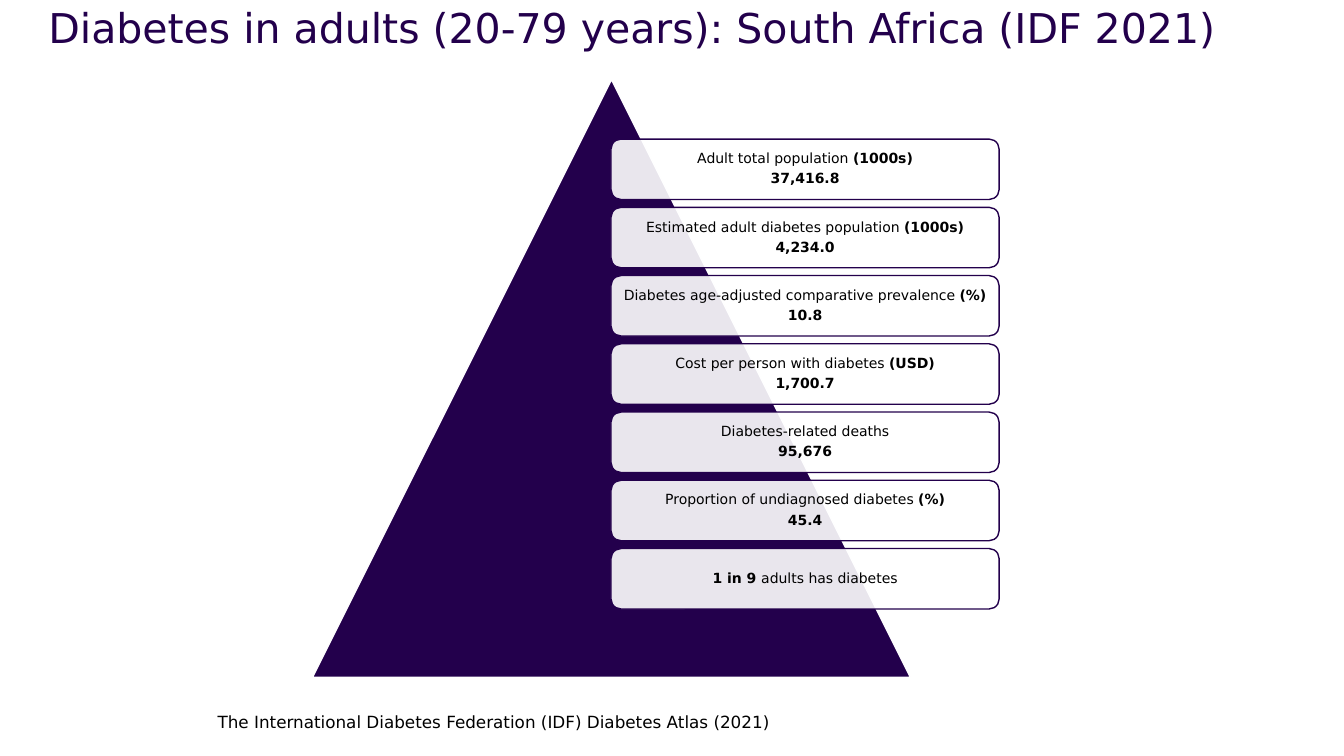
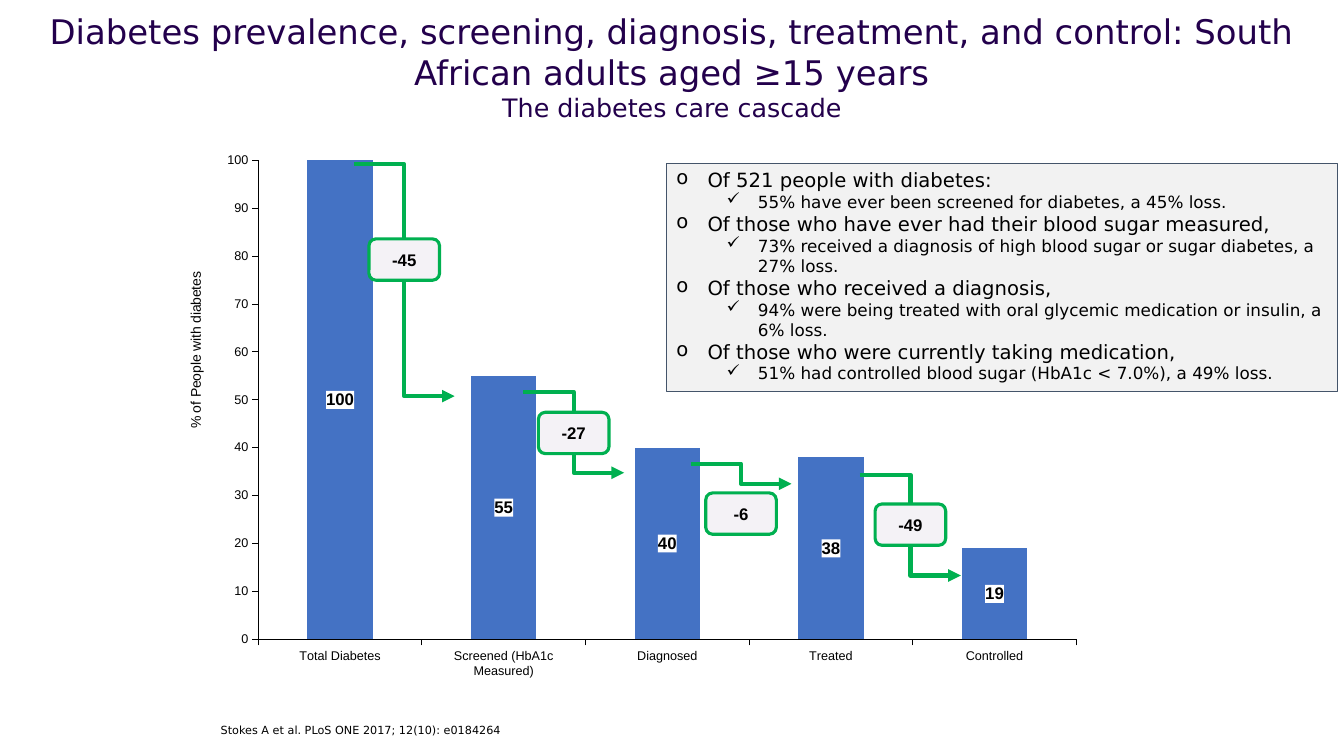
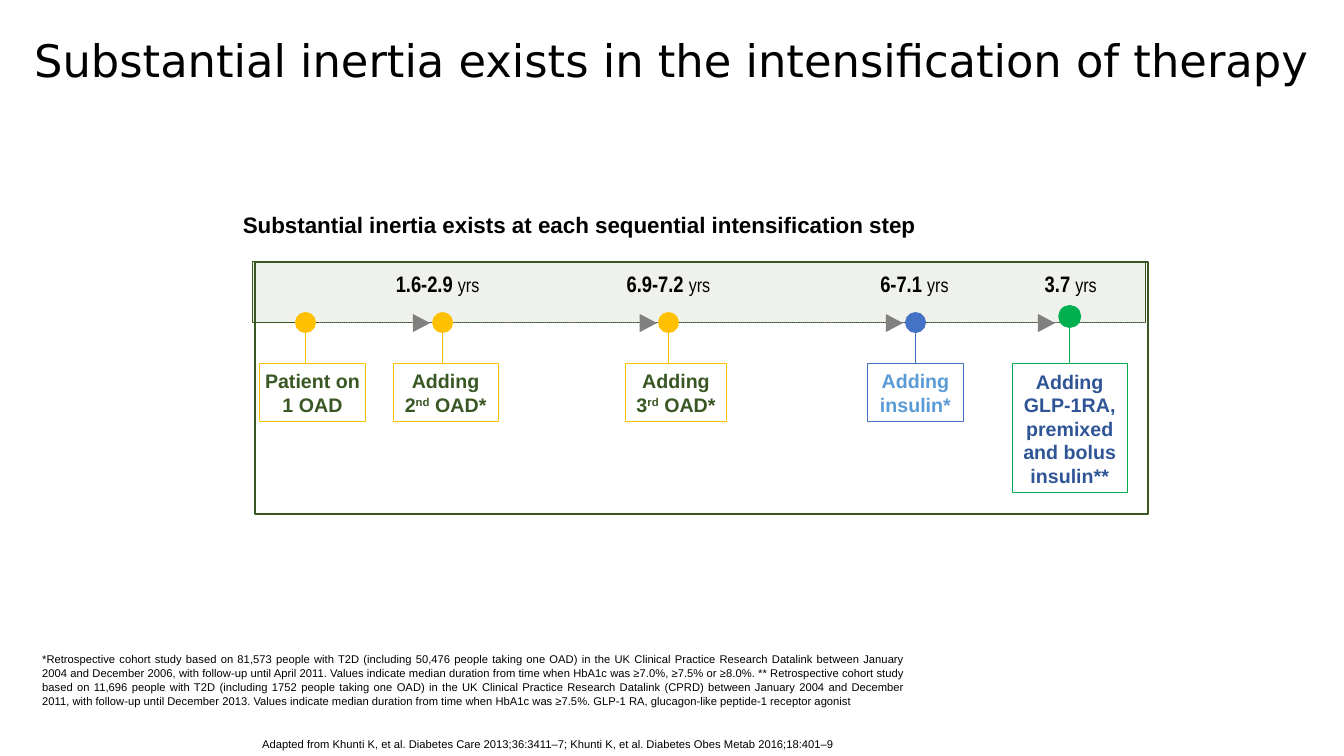
from lxml import etree
from pptx import Presentation
from pptx import util as u
from pptx.chart.data import CategoryChartData
from pptx.dml.color import RGBColor
from pptx.enum import chart as ch, dml, shapes, text
from pptx.oxml.ns import qn

PX = 9144  # EMU, so 100 px make an inch
SANS, ARIAL, NARROW = "DejaVu Sans", "Arial", "Arial Narrow"
INK, NAVY, WHITE = "000000", "23004C", "FFFFFF"
GREEN, GOLD, BLUE, GREY = "00B050", "FFC000", "4472C4", "808080"
MOSS, SKY, ROYAL = "385723", "5B9BD5", "2F5597"
KIND = shapes.MSO_SHAPE
LINK = shapes.MSO_CONNECTOR
ALIGN = text.PP_ALIGN
ANCHOR = text.MSO_ANCHOR
BOLD, SUPER = {"bold": True}, {"sup": True}

# Slide 1: each fact is a list of paragraphs made of (text, style) runs
FACTS = [
    [[("Adult total population ", {}), ("(1000s)", BOLD)], [("37,416.8", BOLD)]],
    [[("Estimated adult diabetes population ", {}), ("(1000s)", BOLD)], [("4,234.0", BOLD)]],
    [[("Diabetes age-adjusted comparative prevalence ", {}), ("(%)", BOLD)], [("10.8", BOLD)]],
    [[("Cost per person with diabetes ", {}), ("(USD)", BOLD)], [("1,700.7", BOLD)]],
    [["Diabetes-related deaths"], [("95,676", BOLD)]],
    [[("Proportion of undiagnosed diabetes ", {}), ("(%)", BOLD)], [("45.4", BOLD)]],
    [[("1 in 9 ", BOLD), ("adults has diabetes", {})]],
]

# Slide 2
CARE = {"Total Diabetes": 100, "Screened (HbA1c Measured)": 55,
        "Diagnosed": 40, "Treated": 38, "Controlled": 19}
LOSSES = [  # label, arrow left, arrow top, drop, badge top
    ("-45", 351, 163, 230, 237),
    ("-27", 519, 389, 80, 409),
    ("-6", 685, 460, 20, 489),
    ("-49", 853, 471, 100, 500),
]
NOTES = [
    ("Of 521 people with diabetes:",
     "55% have ever been screened for diabetes, a 45% loss."),
    ("Of those who have ever had their blood sugar measured,",
     "73% received a diagnosis of high blood sugar or sugar diabetes, a 27% loss."),
    ("Of those who received a diagnosis,",
     "94% were being treated with oral glycemic medication or insulin, a 6% loss."),
    ("Of those who were currently taking medication,",
     "51% had controlled blood sugar (HbA1c < 7.0%), a 49% loss."),
]

# Slide 3: dot centre x and y, dot size, colour; card left, width, height, ink, lines
STEPS = [
    (303, 320, 18, GOLD, 257, 106, 57, MOSS, ["Patient on", "1 OAD"]),
    (439, 320, 18, GOLD, 390, 104, 57, MOSS,
     ["Adding", [("2", {}), ("nd", SUPER), (" OAD*", {})]]),
    (663, 320, 18, GOLD, 620, 101, 57, MOSS,
     ["Adding", [("3", {}), ("rd", SUPER), (" OAD*", {})]]),
    (908, 320, 18, BLUE, 860, 96, 57, SKY, ["Adding", "insulin*"]),
    (1061, 314, 20, GREEN, 1004, 114, 128, ROYAL,
     ["Adding", "GLP-1RA,", "premixed", "and bolus", "insulin**"]),
]
WAITS = [  # years, label centre, arrow left
    ("1.6-2.9 ", 434, 409), ("6.9-7.2 ", 663, 634),
    ("6-7.1 ", 907, 878), ("3.7 ", 1062, 1029),
]
STUDY = (
    "*Retrospective cohort study based on 81,573 people with T2D (including 50,476 people "
    "taking one OAD) in the UK Clinical Practice Research Datalink between January 2004 and "
    "December 2006, with follow-up until April 2011. Values indicate median duration from time "
    "when HbA1c was ≥7.0%, ≥7.5% or ≥8.0%. ** Retrospective cohort study based on 11,696 people "
    "with T2D (including 1752 people taking one OAD) in the UK Clinical Practice Research "
    "Datalink (CPRD) between January 2004 and December 2011, with follow-up until December 2013. "
    "Values indicate median duration from time when HbA1c was ≥7.5%. GLP-1 RA, glucagon-like "
    "peptide-1 receptor agonist"
)


def rgb(code):
    return RGBColor.from_string(code)


def px(*nums):
    return [u.Emu(int(n * PX)) for n in nums]


def style(font, size=None, face=None, ink=None, bold=None, sup=False):
    if size:
        font.size = u.Pt(size)
    if face:
        font.name = face
    if ink:
        font.color.rgb = rgb(ink)
    if bold is not None:
        font.bold = bold
    if sup:
        font._element.set("baseline", "30000")


def write(shape, paras, size, face=SANS, ink=INK, bold=None, align=ALIGN.LEFT,
          anchor=ANCHOR.TOP, inset=(10, 5), wrap=True, line=None, before=None, after=None):
    """Fill a shape with paragraphs; each is a string or a list of runs."""
    frame = shape.text_frame
    frame.word_wrap = wrap
    frame.vertical_anchor = anchor
    frame.margin_left = frame.margin_right = px(inset[0])[0]
    frame.margin_top = frame.margin_bottom = px(inset[1])[0]
    for i, runs in enumerate(paras):
        para = frame.add_paragraph() if i else frame.paragraphs[0]
        para.alignment = align
        para.line_spacing, para.space_before, para.space_after = line, before, after
        style(para.font, size, face, ink, bold)
        for part in [runs] if isinstance(runs, str) else runs:
            words, look = (part, {}) if isinstance(part, str) else part
            run = para.add_run()
            run.text = words
            if look:
                style(run.font, **look)
    return frame.paragraphs


def label(slide, box, paras, size, **look):
    return write(slide.shapes.add_textbox(*px(*box)), paras, size, **look)


def title(slide, box, paras, size, ink=NAVY, inset=(0, 0), **look):
    return label(slide, box, paras, size, ink=ink, inset=inset, **look)


def draw(slide, kind, box, fill, edge=None, width=1, alpha=None):
    shape = slide.shapes.add_shape(kind, *px(*box))
    shape.shadow.inherit = False
    shape.fill.solid()
    shape.fill.fore_color.rgb = rgb(fill)
    if alpha:
        tint = shape._element.spPr.find(".//" + qn("a:srgbClr"))
        etree.SubElement(tint, qn("a:alpha"), val=str(alpha * 1000))
    if edge:
        shape.line.color.rgb = rgb(edge)
        shape.line.width = u.Pt(width)
    else:
        shape.line.fill.background()
    return shape


def link(slide, kind, ends, ink, width=0.75, dash=None, arrow=False):
    wire = slide.shapes.add_connector(kind, *px(*ends))
    wire.line.color.rgb = rgb(ink)
    wire.line.width = u.Pt(width)
    if dash:
        wire.line.dash_style = dash
    spot = wire._element.spPr
    if arrow:
        etree.SubElement(spot.find(qn("a:ln")), qn("a:tailEnd"), type="triangle")
    etree.SubElement(spot, qn("a:effectLst"))


def bullet(para, mark, left, hang=31):
    props = para._p.get_or_add_pPr()
    props.set("marL", str(left * PX))
    props.set("indent", str(-hang * PX))
    sign = etree.Element(qn("a:buChar"), char=mark)
    props.find(qn("a:defRPr")).addprevious(sign)


def place(node, spot, **vals):
    """Give a chart part a fixed layout, as fractions of the chart."""
    old = node.find(qn("c:layout"))
    if old is not None:
        node.remove(old)
    lay = etree.Element(qn("c:layout"))
    node.insert(spot, lay)
    man = etree.SubElement(lay, qn("c:manualLayout"))
    for tag, val in vals.items():
        etree.SubElement(man, qn("c:" + tag), val=str(val))


def columns(slide):
    data = CategoryChartData()
    data.categories = list(CARE)
    data.add_series("Series 1", list(CARE.values()))
    chart = slide.shapes.add_chart(
        ch.XL_CHART_TYPE.COLUMN_STACKED, *px(164, 143, 922, 540), data).chart
    chart.has_legend = chart.has_title = False
    style(chart.font, 10, ARIAL, INK)
    plot = chart.plots[0]
    plot.gap_width, plot.overlap, plot.vary_by_categories = 150, 100, False
    fill = plot.series[0].format.fill
    fill.solid()
    fill.fore_color.rgb = rgb(BLUE)

    plot.has_data_labels = True
    tags = plot.data_labels
    tags.show_value = True
    tags.position = ch.XL_LABEL_POSITION.CENTER
    style(tags.font, 12, ARIAL, INK, True)
    back = etree.Element(qn("c:spPr"))
    solid = etree.SubElement(back, qn("a:solidFill"))
    etree.SubElement(solid, qn("a:srgbClr"), val=WHITE)
    tags._element.find(qn("c:txPr")).addprevious(back)

    for axis in (chart.category_axis, chart.value_axis):
        axis.has_major_gridlines = False
        axis.major_tick_mark = ch.XL_TICK_MARK.OUTSIDE
        axis.format.line.color.rgb = rgb(INK)
        axis.format.line.width = u.Pt(0.75)
        style(axis.tick_labels.font, 9, ARIAL, INK)
    axis.minimum_scale, axis.maximum_scale, axis.major_unit = 0, 100, 10
    name = axis.axis_title
    para = name.text_frame.paragraphs[0]
    para.text = "% of People with diabetes"
    style(para.font, 10, ARIAL, INK, False)
    place(name._element, 1, xMode="edge", yMode="edge", x=0.02, y=0.23)
    place(chart._chartSpace.find(".//" + qn("c:plotArea")), 0, layoutTarget="inner",
          xMode="edge", yMode="edge", x=0.1, y=0.03, w=0.88, h=0.88)


def facts(slide):
    draw(slide, KIND.ISOSCELES_TRIANGLE, (310, 79, 593, 593), NAVY, WHITE)
    for i, paras in enumerate(FACTS):
        card = draw(slide, KIND.ROUNDED_RECTANGLE, (606, 138 + 67.7 * i, 385, 60),
                    WHITE, NAVY, alpha=90)
        write(card, paras, 10, align=ALIGN.CENTER, anchor=ANCHOR.MIDDLE,
              inset=(4, 4), line=0.9, after=u.Pt(3.5))
    label(slide, (206, 701, 916, 30),
          ["The International Diabetes Federation (IDF) Diabetes Atlas (2021)"], 12)
    title(slide, (48, 8, 1237, 62),
          ["Diabetes in adults (20-79 years): South Africa (IDF 2021)"], 29.3, line=0.9)


def cascade(slide):
    columns(slide)
    for loss, left, top, drop, high in LOSSES:
        link(slide, LINK.ELBOW, (left, top, left + 100, top + drop), GREEN, 3, arrow=True)
        badge = draw(slide, KIND.ROUNDED_RECTANGLE, (left + 15, high, 70, 41),
                     "F4F2F6", GREEN, 2.25)
        write(badge, [loss], 12, ARIAL, bold=True, align=ALIGN.CENTER, anchor=ANCHOR.MIDDLE)
    title(slide, (48, 11, 1237, 112),
          ["Diabetes prevalence, screening, diagnosis, treatment, and control: "
           "South African adults aged ≥15 years",
           [("The diabetes care cascade", {"size": 18.1})]], 24.2, align=ALIGN.CENTER)
    label(slide, (209, 709, 1092, 28),
          ["Stokes A et al. PLoS ONE 2017; 12(10): e0184264"], 8, line=1.25)
    panel = draw(slide, KIND.RECTANGLE, (661, 162, 666, 226), "F2F2F2", "44546A", 0.75)
    lines = write(panel, [words for pair in NOTES for words in pair], 14)
    for head, sub in zip(lines[::2], lines[1::2]):
        bullet(head, "o", 31)
        sub.level = 1
        sub.font.size = u.Pt(12)
        bullet(sub, "✓", 81)


def inertia(slide):
    draw(slide, KIND.RECTANGLE, (253, 260, 886, 250), WHITE, MOSS, 1.5)
    draw(slide, KIND.RECTANGLE, (250, 259, 886, 61), MOSS, MOSS, 0.5, alpha=8)
    title(slide, (24, 34, 1300, 84),
          ["Substantial inertia exists in the intensification of therapy"], 32,
          ink=INK, inset=(10, 5), line=0.9)
    label(slide, (253, 723, 612, 24),
          ["Adapted from Khunti K, et al. Diabetes Care 2013;36:3411–7; "
           "Khunti K, et al. Diabetes Obes Metab 2016;18:401–9"], 8,
          face=ARIAL, inset=(7, 4), line=u.Pt(13))
    label(slide, (231, 206, 886, 35),
          ["Substantial inertia exists at each sequential intensification step"], 16,
          face=ARIAL, bold=True, line=u.Pt(18), before=u.Pt(10))
    link(slide, LINK.STRAIGHT, (316, 320, 1136, 320), GREY, dash=dml.MSO_LINE.ROUND_DOT)
    for years, mid, left in WAITS:
        label(slide, (mid - 52, 263, 104, 37),
              [[(years, BOLD), ("yrs", {"size": 14})]], 16,
              face=NARROW, align=ALIGN.CENTER, wrap=False)
        draw(slide, KIND.ISOSCELES_TRIANGLE, (left, 312, 18, 17), GREY).rotation = 90
    for x, y, size, hue, left, wide, high, ink, lines in STEPS:
        link(slide, LINK.STRAIGHT, (x, y, x, 361), hue)
        draw(slide, KIND.OVAL, (x - size / 2, y - size / 2, size, size), hue, hue, 2)
        card = draw(slide, KIND.RECTANGLE, (left, 361, wide, high), WHITE, hue, 0.75)
        write(card, lines, 14, ARIAL, ink, True, ALIGN.CENTER, ANCHOR.MIDDLE, (4, 5))
    label(slide, (32, 642, 876, 65), [STUDY], 8, face=ARIAL, align=ALIGN.JUSTIFY,
          anchor=ANCHOR.BOTTOM, line=u.Pt(10))


def main():
    deck = Presentation()
    deck.slide_width, deck.slide_height = px(1333, 750)
    for build in (facts, cascade, inertia):
        build(deck.slides.add_slide(deck.slide_layouts[6]))
    deck.save("out.pptx")


if __name__ == "__main__":
    main()
